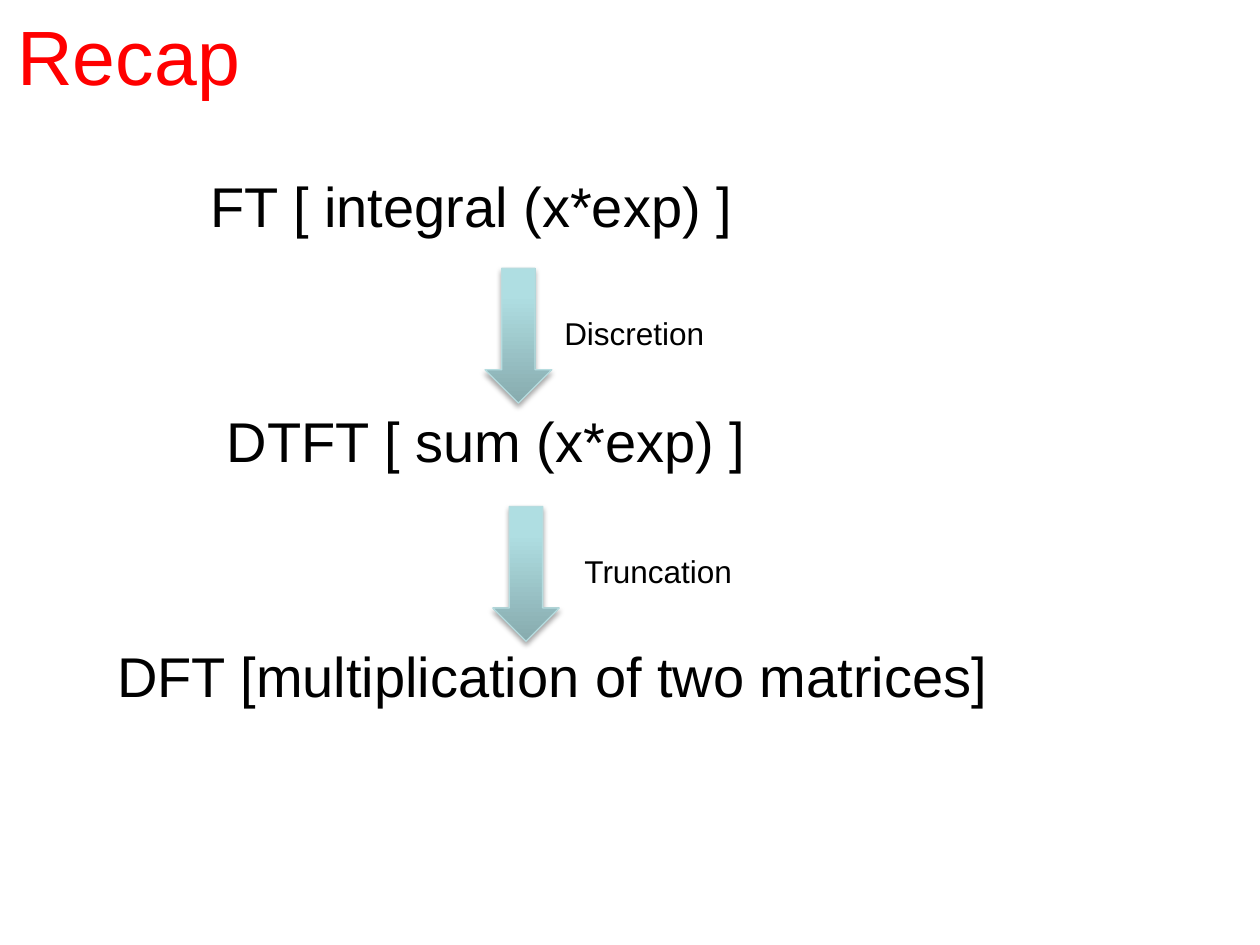
from dataclasses import dataclass

from pptx import Presentation
from pptx.dml.color import RGBColor as Rgb
from pptx.enum.shapes import MSO_SHAPE as Preset
from pptx.enum.text import MSO_ANCHOR as Anchor
from pptx.oxml import parse_xml
from pptx.oxml.ns import nsdecls
from pptx.util import Inches, Pt


@dataclass(frozen=True)
class Theme:
    """Fonts, colours and type sizes of the deck."""
    font: str = "Arial"
    title_color: str = "FF0000"
    text_color: str = "000000"
    edge_color: str = "B6DCDF"
    shadow_color: str = "000000"
    gradient: tuple = ((0, "87ABAE"), (80, "AFDEE2"), (100, "AFE0E4"))
    title_size: int = 44
    body_size: int = 32
    label_size: int = 18


@dataclass(frozen=True)
class Box:
    """A region in grid columns and rows."""
    left: float
    top: float
    width: float
    height: float

    def lengths(self):
        """Return the region as slide lengths."""
        return [cells(n) for n in (self.left, self.top, self.width, self.height)]


THEME = Theme()
COLUMNS, ROWS = 100, 75
CELL = Inches(10) // COLUMNS
STAGES = (
    ("FT [ integral (x*exp) ]", 19.5),
    ("DTFT [ sum (x*exp) ]", 20.8),
    ("DFT [multiplication of two matrices]", 12.1),
)
STEPS = (("Discretion", 38.5, 0, 13.2), ("Truncation", 39.1, 1, 13.9))
STEP_TOP, STEP_PITCH, STEP_HEIGHT = 21.3, 18.9, 10.7
ARROW_WIDTH = 5.3


def cells(count):
    """Return the length of a number of grid cells."""
    return round(count * CELL)


def add_span(para, text, size, color):
    """Add one styled run to a paragraph."""
    span = para.add_run()
    span.text = text
    span.font.name = THEME.font
    span.font.size = Pt(size)
    span.font.color.rgb = Rgb.from_string(color)


def add_title(page, box, text):
    """Place the page title, centred vertically in its box."""
    frame = page.shapes.add_textbox(*box.lengths()).text_frame
    frame.word_wrap = True
    frame.vertical_anchor = Anchor.MIDDLE
    add_span(frame.paragraphs[0], text, THEME.title_size, THEME.title_color)


def add_stages(page, box, stages):
    """Place the transforms as evenly spaced, indented paragraphs."""
    frame = page.shapes.add_textbox(*box.lengths()).text_frame
    frame.word_wrap = True
    frame.margin_left = 0
    frame.margin_top = cells(0.5)
    for index, (text, indent) in enumerate(stages):
        para = frame.add_paragraph() if index else frame.paragraphs[0]
        para._p.get_or_add_pPr().set("marL", str(cells(indent)))
        if index:
            para.space_before = Pt(95.8)
        add_span(para, text, THEME.body_size, THEME.text_color)


def add_arrow(page, box):
    """Place a shaded down arrow with a soft shadow."""
    arrow = page.shapes.add_shape(Preset.DOWN_ARROW, *box.lengths())
    stops = "".join(
        f'<a:gs pos="{share * 1000}"><a:srgbClr val="{color}"/></a:gs>'
        for share, color in THEME.gradient
    )
    properties = arrow._element.spPr
    properties.append(parse_xml(
        f'<a:gradFill {nsdecls("a")} rotWithShape="1"><a:gsLst>{stops}</a:gsLst>'
        '<a:lin ang="16200000" scaled="0"/></a:gradFill>'
    ))
    arrow.line.color.rgb = Rgb.from_string(THEME.edge_color)
    arrow.line.width = Pt(0.75)
    arrow.shadow.inherit = False
    properties[-1].append(parse_xml(
        f'<a:outerShdw {nsdecls("a")} blurRad="{Pt(3.1)}" dist="{Pt(1.8)}" '
        f'dir="5400000" rotWithShape="0"><a:srgbClr val="{THEME.shadow_color}">'
        '<a:alpha val="35000"/></a:srgbClr></a:outerShdw>'
    ))


def add_step(page, box, text, label_width):
    """Place an arrow at the left of the box and its label at the right."""
    add_arrow(page, Box(box.left, box.top, ARROW_WIDTH, box.height))
    label_left = box.left + box.width - label_width
    label = Box(label_left, box.top + 0.29 * box.height, label_width, 4)
    frame = page.shapes.add_textbox(*label.lengths()).text_frame
    frame.word_wrap = False
    add_span(frame.paragraphs[0], text, THEME.label_size, THEME.text_color)


def main():
    """Build the recap slide and save the deck."""
    deck = Presentation()
    deck.slide_width, deck.slide_height = cells(COLUMNS), cells(ROWS)
    page = deck.slides.add_slide(deck.slide_layouts[6])
    add_title(page, Box(0.4, -1.9, 90, 12.5), "Recap")
    add_stages(page, Box(-2.8, 13.1, 95, 49.5), STAGES)
    for text, left, row, label_width in STEPS:
        width = ARROW_WIDTH + row + label_width
        top = STEP_TOP + row * STEP_PITCH
        add_step(page, Box(left, top, width, STEP_HEIGHT), text, label_width)
    deck.save("out.pptx")


if __name__ == "__main__":
    main()
